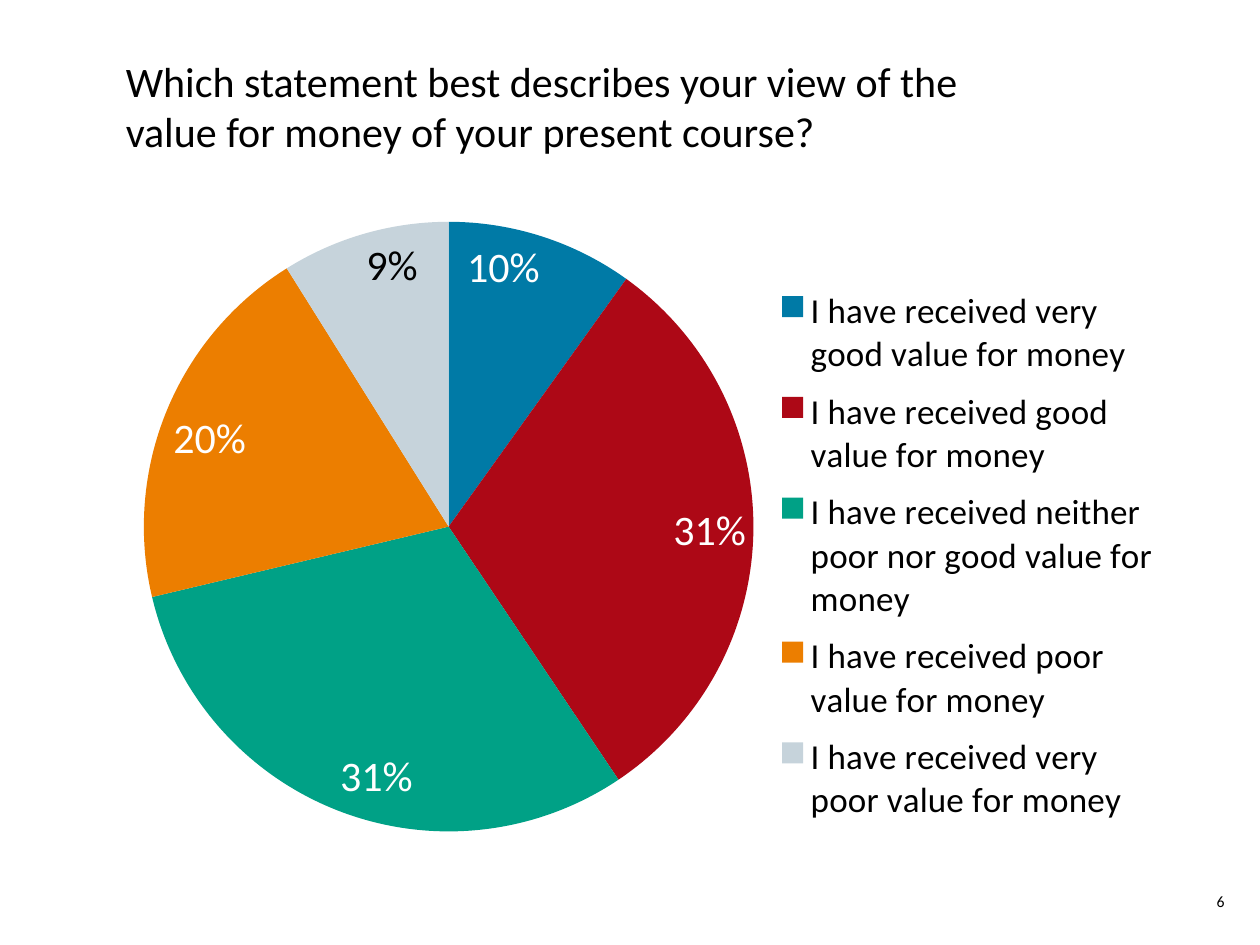
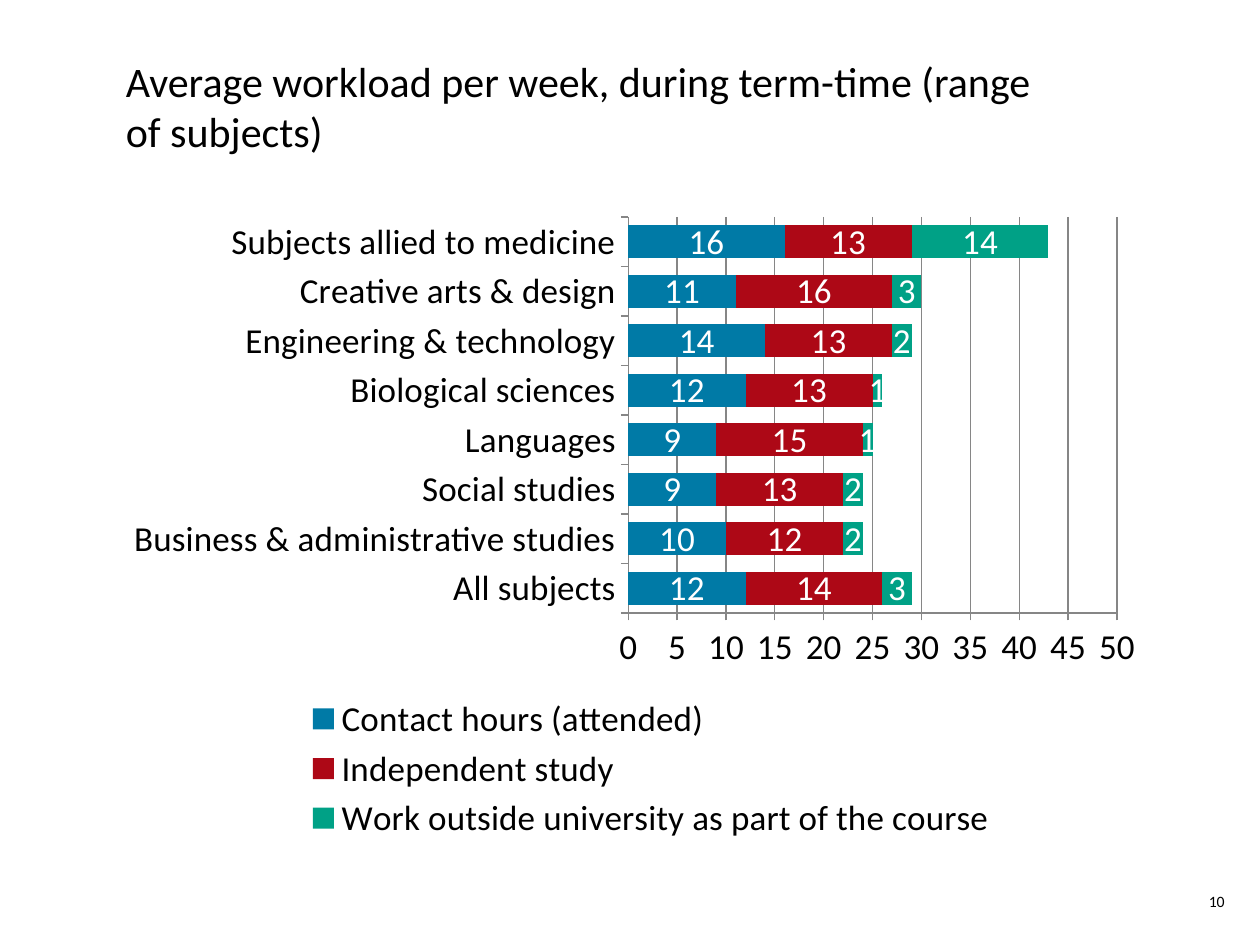
from lxml import etree
from pptx import Presentation
from pptx.chart.data import CategoryChartData
from pptx.dml.color import RGBColor
from pptx.enum.chart import XL_CHART_TYPE as Kind
from pptx.enum.chart import XL_LABEL_POSITION as LabelPlace
from pptx.enum.chart import XL_LEGEND_POSITION as LegendPlace
from pptx.enum.chart import XL_TICK_MARK as Tick
from pptx.enum.text import MSO_ANCHOR as Anchor
from pptx.enum.text import PP_ALIGN as Align
from pptx.oxml.ns import qn
from pptx.util import Inches, Pt

BLACK, WHITE, GREY = "000000", "FFFFFF", "868686"
PALETTE = ["007AA6", "AD0816", "00A186", "EC7E00", "C6D3DB"]
FONT = "Calibri"

VALUE_RATINGS = {
    "I have received very good value for money": 0.1,
    "I have received good value for money": 0.31,
    "I have received neither poor nor good value for money": 0.31,
    "I have received poor value for money": 0.2,
    "I have received very poor value for money": 0.09,
}
SUBJECTS = [
    "All subjects", "Business & administrative studies", "Social studies", "Languages",
    "Biological sciences", "Engineering & technology", "Creative arts & design",
    "Subjects allied to medicine",
]
WEEKLY_HOURS = {
    "Contact hours (attended)": [12, 10, 9, 9, 12, 14, 11, 16],
    "Independent study": [14, 12, 13, 15, 13, 13, 16, 13],
    "Work outside university as part of the course": [3, 2, 2, 1, 1, 2, 3, 14],
}


def rgb(value):
    return RGBColor.from_string(value)


def style_font(font, size, color=BLACK):
    font.name = FONT
    font.size = Pt(size)
    font.color.rgb = rgb(color)


def paint(part, color):
    part.format.fill.solid()
    part.format.fill.fore_color.rgb = rgb(color)


def make_layout(x, y, width, height, inner=False):
    layout = etree.Element(qn("c:layout"))
    manual = etree.SubElement(layout, qn("c:manualLayout"))
    settings = [("xMode", "edge"), ("yMode", "edge"),
                ("x", x), ("y", y), ("w", width), ("h", height)]
    if inner:
        settings.insert(0, ("layoutTarget", "inner"))
    for tag, value in settings:
        etree.SubElement(manual, qn(f"c:{tag}")).set("val", str(value))
    return layout


class SurveyDeck:
    def __init__(self):
        self.deck = Presentation()
        self.deck.slide_width = Inches(10)
        self.deck.slide_height = Inches(7.5)
        self.page = None

    def add_page(self, title, number):
        self.page = self.deck.slides.add_slide(self.deck.slide_layouts[6])
        self.add_text(title, (0.9, 0.52, 7.56, 0.77), 24, Anchor.BOTTOM)
        footer = self.add_text(number, (9.25, 6.95, 0.47, 0.4), 9, Anchor.MIDDLE, Align.RIGHT)
        footer.margin_right = 0

    def add_text(self, text, place, size, anchor, align=Align.LEFT):
        box = self.page.shapes.add_textbox(*map(Inches, place)).text_frame
        box.word_wrap = True
        box.vertical_anchor = anchor
        para = box.paragraphs[0]
        para.alignment = align
        span = para.add_run()
        span.text = text
        style_font(span.font, size)
        return box

    def add_chart(self, kind, place, data, size, legend_place, plot_area, legend_area):
        chart = self.page.shapes.add_chart(kind, *map(Inches, place), data).chart
        chart.has_title = False
        style_font(chart.font, size)
        chart.has_legend = True
        chart.legend.position = legend_place
        chart.legend.include_in_layout = False
        style_font(chart.legend.font, 20)
        root = chart.element
        for old in root.xpath(".//c:plotArea/c:layout | .//c:legend/c:layout"):
            old.getparent().remove(old)
        root.xpath(".//c:plotArea")[0].insert(0, make_layout(*plot_area, inner=True))
        root.xpath(".//c:legendPos")[0].addnext(make_layout(*legend_area))
        return chart

    def add_labels(self, series, number_format, position, size):
        labels = series.data_labels
        labels.show_value = True
        labels.number_format = number_format
        labels.number_format_is_linked = False
        labels.position = position
        style_font(labels.font, size, WHITE)

    def add_pie(self, place, shares):
        data = CategoryChartData(number_format="0%")
        data.categories = list(shares)
        data.add_series("Series 1", list(shares.values()))
        chart = self.add_chart(Kind.PIE, place, data, 24, LegendPlace.RIGHT,
                               (0.0275, 0.0275, 0.574, 0.945), (0.635, 0.11, 0.35, 0.87))
        series = chart.plots[0].series[0]
        self.add_labels(series, "0%", LabelPlace.INSIDE_END, 24)
        for index, color in enumerate(PALETTE):
            paint(series.points[index], color)
        pale_label = series.points[len(PALETTE) - 1].data_label
        style_font(pale_label.font, 24)
        pale_label.position = LabelPlace.INSIDE_END

    def add_stacked_bars(self, place, categories, hours):
        data = CategoryChartData(number_format="0")
        data.categories = categories
        for name, values in hours.items():
            data.add_series(name, values)
        chart = self.add_chart(Kind.BAR_STACKED, place, data, 20, LegendPlace.BOTTOM,
                               (0.493, 0.02, 0.469, 0.614), (0.165, 0.755, 0.7, 0.24))
        plot = chart.plots[0]
        plot.vary_by_categories = False
        plot.gap_width = 50
        plot.overlap = 100
        for series, color in zip(plot.series, PALETTE):
            paint(series, color)
            self.add_labels(series, "#,##0", LabelPlace.CENTER, 20)
        scale = chart.value_axis
        scale.minimum_scale, scale.maximum_scale, scale.major_unit = 0, 50, 5
        scale.tick_labels.number_format = "0"
        scale.tick_labels.number_format_is_linked = False
        scale.has_major_gridlines = True
        for axis in (scale, chart.category_axis):
            axis.major_tick_mark = Tick.OUTSIDE
            style_font(axis.tick_labels.font, 20)
        for line in (scale.format.line, chart.category_axis.format.line,
                     scale.major_gridlines.format.line):
            line.color.rgb = rgb(GREY)
            line.width = Pt(0.75)


def main():
    survey = SurveyDeck()
    survey.add_page("Which statement best describes your view of the "
                    "value for money of your present course?", "6")
    survey.add_pie((0.91, 1.62, 8.43, 5.12), VALUE_RATINGS)
    survey.add_page("Average workload per week, during term-time (range of subjects)", "10")
    survey.add_stacked_bars((0.91, 1.62, 8.27, 5.12), SUBJECTS, WEEKLY_HOURS)
    survey.deck.save("out.pptx")


if __name__ == "__main__":
    main()
